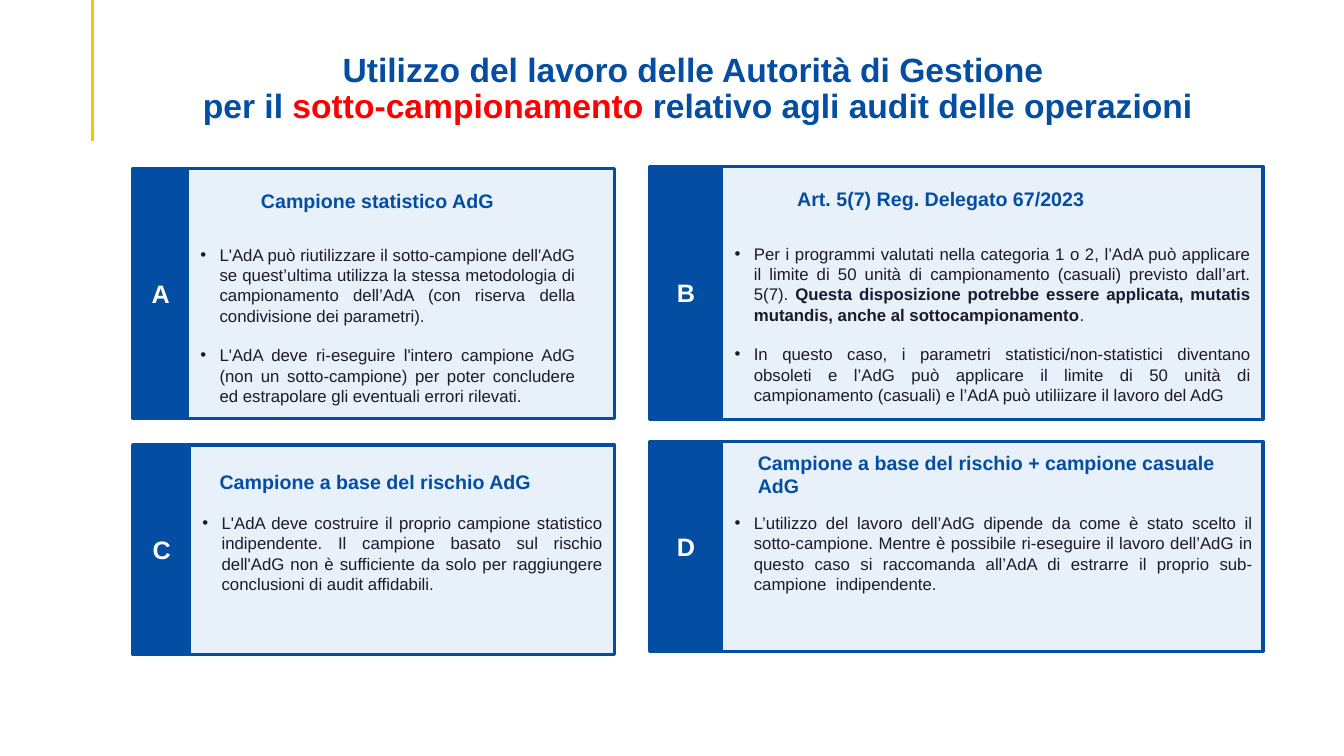
"""Build the slide on sub-sampling from the work of the managing authority."""
from dataclasses import dataclass

from lxml.etree import SubElement
from pptx import Presentation
from pptx.dml.color import RGBColor
from pptx.enum.shapes import MSO_CONNECTOR, MSO_SHAPE
from pptx.enum.text import MSO_ANCHOR, PP_ALIGN
from pptx.oxml.ns import qn
from pptx.util import Inches, Pt

SLIDE_WIDTH, SLIDE_HEIGHT = Inches(13.33), Inches(7.5)
COLUMN, ROW = SLIDE_WIDTH / 40, SLIDE_HEIGHT / 30
BLUE = RGBColor(0x03, 0x4E, 0xA2)
PALE_BLUE = RGBColor(0xE8, 0xF0, 0xFA)
INK = RGBColor(0x1A, 0x1A, 0x2E)
RED = RGBColor(0xFF, 0x00, 0x00)
GOLD = RGBColor(0xFF, 0xC0, 0x00)
WHITE = RGBColor(0xFF, 0xFF, 0xFF)
BULLET_INDENT = Inches(0.19)


@dataclass
class Card:
    """A lettered card, measured in grid columns and rows."""
    letter: str
    box: tuple
    stripe: float
    heading: str
    heading_offset: tuple
    body_top: float
    body_margin: float
    points: list


CARDS = [
    Card("A", (3.96, 6.68, 14.34, 9.92), 1.65,
         "Campione statistico AdG", (1.86, 0.44), 2.84, 0.87,
         [["L'AdA può riutilizzare il sotto-campione dell'AdG se quest’ultima utilizza "
           "la stessa metodologia di campionamento dell’AdA (con riserva della "
           "condivisione dei parametri)."],
          ["L'AdA deve ri-eseguire l'intero campione AdG (non un sotto-campione) per "
           "poter concludere ed estrapolare gli eventuali errori rilevati."]]),
    Card("B", (19.32, 6.6, 18.27, 10.04), 2.19,
         "Art. 5(7) Reg. Delegato 67/2023", (1.92, 0.44), 2.88, 0.06,
         [["Per i programmi valutati nella categoria 1 o 2, l’AdA può applicare il "
           "limite di 50 unità di campionamento (casuali) previsto dall’art. 5(7). ",
           "Questa disposizione potrebbe essere applicata, mutatis mutandis, anche al "
           "sottocampionamento", "."],
          ["In questo caso, i parametri statistici/non-statistici diventano obsoleti e "
           "l’AdG può applicare il limite di 50 unità di campionamento (casuali) e "
           "l’AdA può utiliizare il lavoro del AdG"]]),
    Card("C", (3.96, 17.66, 14.34, 8.32), 1.71,
         "Campione a base del rischio AdG", (0.57, 0.62), 2.5, 0.06,
         [["L'AdA deve costruire il proprio campione statistico indipendente. Il "
           "campione basato sul rischio dell'AdG non è sufficiente da solo per "
           "raggiungere conclusioni di audit affidabili."]]),
    Card("D", (19.32, 17.52, 18.27, 8.32), 2.19,
         "Campione a base del rischio + campione casuale AdG", (0.75, 0.46), 2.64, 0,
         [["L’utilizzo del lavoro dell’AdG dipende da come è stato scelto il "
           "sotto-campione. Mentre è possibile ri-eseguire il lavoro dell’AdG in "
           "questo caso si raccomanda all’AdA di estrarre il proprio "
           "sub-campione  indipendente."]]),
]


def on_grid(left, top, width, height):
    """Turn grid columns and rows into slide lengths."""
    return (round(left * COLUMN), round(top * ROW),
            round(width * COLUMN), round(height * ROW))


def style_run(run, size, colour, bold=False):
    """Set the font of one run."""
    run.font.name = "Arial"
    run.font.size = Pt(size)
    run.font.bold = bold
    run.font.color.rgb = colour


def add_text_box(slide, box, anchor):
    """Add a wrapping text box and return its text frame."""
    text_frame = slide.shapes.add_textbox(*on_grid(*box)).text_frame
    text_frame.word_wrap = True
    text_frame.vertical_anchor = anchor
    return text_frame


def add_panel(slide, box, fill, line_width):
    """Add a blue-edged rectangle."""
    shape = slide.shapes.add_shape(MSO_SHAPE.RECTANGLE, *on_grid(*box))
    shape.shadow.inherit = False
    shape.fill.solid()
    shape.fill.fore_color.rgb = fill
    shape.line.color.rgb = BLUE
    shape.line.width = Pt(line_width)
    return shape


def add_accent_line(slide, left, length):
    """Draw the gold line that hangs from the top edge."""
    x, y, _, drop = on_grid(left, 0, 0, length)
    connector = slide.shapes.add_connector(MSO_CONNECTOR.STRAIGHT, x, y, x, y + drop)
    connector.line.color.rgb = GOLD
    connector.line.width = Pt(2.25)
    SubElement(connector._element.spPr, qn("a:effectLst"))


def add_title(slide, box):
    """Write the two-line title with its red keyword."""
    text_frame = add_text_box(slide, box, MSO_ANCHOR.BOTTOM)
    text_frame.margin_bottom = 0
    paragraph = text_frame.paragraphs[0]
    paragraph.text = "Utilizzo del lavoro delle Autorità di Gestione \vper il "
    paragraph.alignment = PP_ALIGN.CENTER
    paragraph.line_spacing = 0.9
    keyword = paragraph.add_run()
    keyword.text = "sotto-campionamento"
    paragraph.add_run().text = " relativo agli audit delle operazioni"
    for run in paragraph.runs:
        style_run(run, 24, BLUE, bold=True)
    keyword.font.color.rgb = RED


def add_points(text_frame, points):
    """Write justified bullets in which every second run is bold."""
    for index, parts in enumerate(points):
        paragraph = text_frame.add_paragraph() if index else text_frame.paragraphs[0]
        paragraph.alignment = PP_ALIGN.JUSTIFY
        if index:
            paragraph.space_before = Pt(14)
        properties = paragraph._p.get_or_add_pPr()
        properties.set("marL", str(BULLET_INDENT))
        properties.set("indent", str(-BULLET_INDENT))
        SubElement(properties, qn("a:buFont"), typeface="Arial")
        SubElement(properties, qn("a:buChar"), char="•")
        for position, part in enumerate(parts):
            run = paragraph.add_run()
            run.text = part
            style_run(run, 12, INK, bold=position % 2 == 1)


def add_card(slide, card):
    """Place a card's panel, letter stripe, heading and bullets in its box."""
    left, top, width, height = card.box
    add_panel(slide, card.box, PALE_BLUE, 2.25)
    stripe = add_panel(slide, (left, top, card.stripe, height), BLUE, 1)
    stripe.text_frame.text = card.letter
    stripe.text_frame.vertical_anchor = MSO_ANCHOR.MIDDLE
    letter = stripe.text_frame.paragraphs[0]
    letter.alignment = PP_ALIGN.CENTER
    style_run(letter.runs[0], 18, WHITE, bold=True)

    content_left, content_width = left + card.stripe, width - card.stripe
    indent, drop = card.heading_offset
    heading_box = (content_left + indent, top + drop, content_width - indent, 1.68)
    heading = add_text_box(slide, heading_box, MSO_ANCHOR.MIDDLE)
    heading.text = card.heading
    style_run(heading.paragraphs[0].runs[0], 14, BLUE, bold=True)

    body_box = (content_left + 0.06, top + card.body_top,
                content_width - 0.06 - card.body_margin, height - card.body_top)
    add_points(add_text_box(slide, body_box, MSO_ANCHOR.TOP), card.points)


def main():
    """Build and save the presentation."""
    presentation = Presentation()
    presentation.slide_width, presentation.slide_height = SLIDE_WIDTH, SLIDE_HEIGHT
    slide = presentation.slides.add_slide(presentation.slide_layouts[6])
    add_accent_line(slide, 2.76, 5.6)
    add_title(slide, (2.82, 1.56, 35.89, 3.44))
    for card in CARDS:
        add_card(slide, card)
    presentation.save("out.pptx")


if __name__ == "__main__":
    main()
